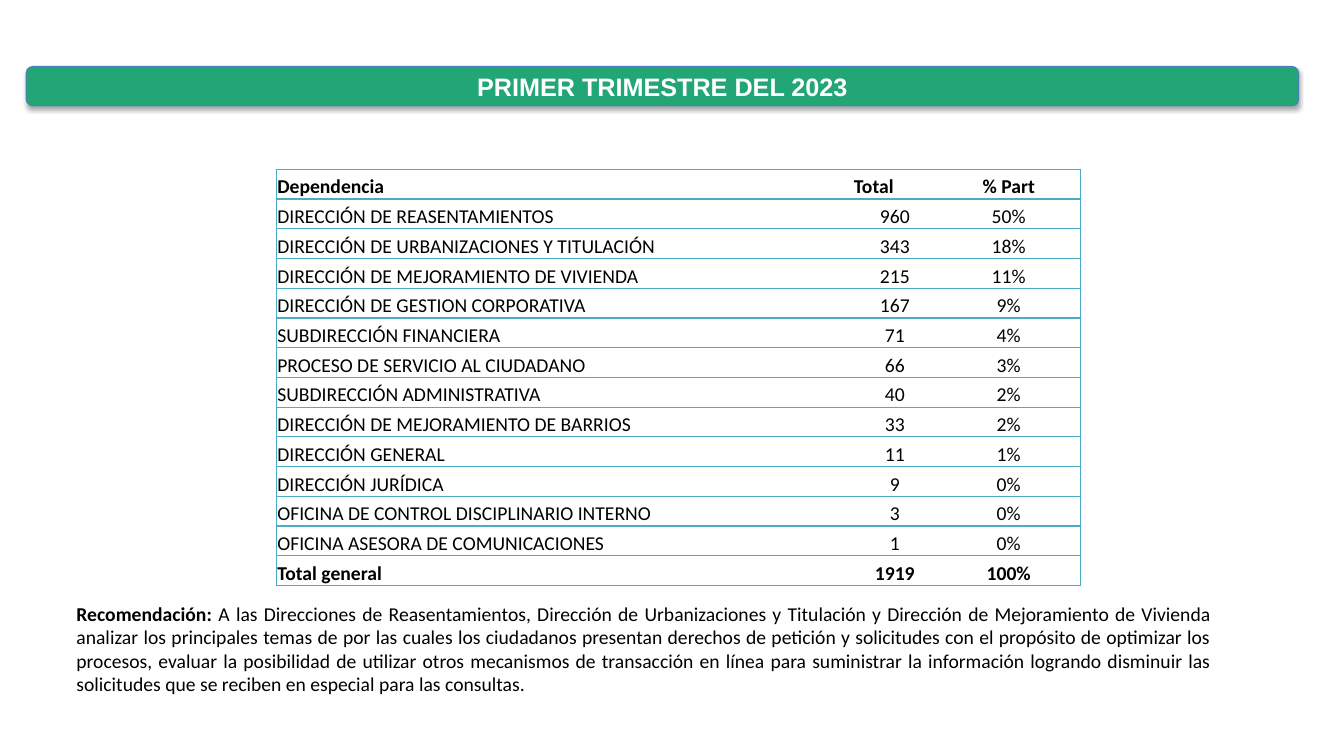
from lxml import etree
from pptx import Presentation
from pptx.dml.color import RGBColor
from pptx.enum.shapes import MSO_SHAPE
from pptx.enum.text import MSO_ANCHOR, MSO_AUTO_SIZE, PP_ALIGN
from pptx.oxml.ns import qn
from pptx.util import Pt

EMU_PER_PX = 9144  # 100 px to the inch

GREEN = RGBColor(0x22, 0xA6, 0x76)
BLUE = RGBColor(0x4B, 0x7E, 0xBC)
TEAL = RGBColor(0x4B, 0xAC, 0xC6)
BLACK = RGBColor(0, 0, 0)
WHITE = RGBColor(0xFF, 0xFF, 0xFF)

ROUNDED = MSO_SHAPE.ROUNDED_RECTANGLE
LEFT, CENTER, JUSTIFY = PP_ALIGN.LEFT, PP_ALIGN.CENTER, PP_ALIGN.JUSTIFY
MIDDLE, BOTTOM = MSO_ANCHOR.MIDDLE, MSO_ANCHOR.BOTTOM
GROW = MSO_AUTO_SIZE.SHAPE_TO_FIT_TEXT

TITLE = "PRIMER TRIMESTRE DEL 2023"
COLUMN_WIDTHS = (572, 83, 143)
REQUESTS = [
    ("Dependencia", "Total", "% Part"),
    ("DIRECCIÓN DE REASENTAMIENTOS", "960", "50%"),
    ("DIRECCIÓN DE URBANIZACIONES Y TITULACIÓN", "343", "18%"),
    ("DIRECCIÓN DE MEJORAMIENTO DE VIVIENDA", "215", "11%"),
    ("DIRECCIÓN DE GESTION CORPORATIVA", "167", "9%"),
    ("SUBDIRECCIÓN FINANCIERA", "71", "4%"),
    ("PROCESO DE SERVICIO AL CIUDADANO", "66", "3%"),
    ("SUBDIRECCIÓN ADMINISTRATIVA", "40", "2%"),
    ("DIRECCIÓN DE MEJORAMIENTO DE BARRIOS", "33", "2%"),
    ("DIRECCIÓN GENERAL", "11", "1%"),
    ("DIRECCIÓN JURÍDICA", "9", "0%"),
    ("OFICINA DE CONTROL DISCIPLINARIO INTERNO", "3", "0%"),
    ("OFICINA ASESORA DE COMUNICACIONES", "1", "0%"),
    ("Total general", "1919", "100%"),
]
RECOMMENDATION = (
    "A las Direcciones de Reasentamientos, Dirección de Urbanizaciones y Titulación "
    "y Dirección de Mejoramiento de Vivienda analizar los principales temas de por las "
    "cuales los ciudadanos presentan derechos de petición y solicitudes con el propósito "
    "de optimizar los procesos, evaluar la posibilidad de utilizar otros mecanismos de "
    "transacción en línea para suministrar la información logrando disminuir las "
    "solicitudes que se reciben en especial para las consultas."
)


def px(*lengths):
    return [length * EMU_PER_PX for length in lengths]


class ReportSlide:
    heading_font = "Arial"
    body_font = "Calibri"
    body_size = 14

    def __init__(self, presentation):
        self.slide = presentation.slides.add_slide(presentation.slide_layouts[6])

    def style_font(self, font, bold, color=BLACK, size=body_size, name=body_font):
        font.name = name
        font.size = Pt(size)
        font.bold = bold
        font.color.rgb = color

    def banner(self, title, *box):
        banner = self.slide.shapes.add_shape(ROUNDED, *px(*box))
        banner.fill.solid()
        banner.fill.fore_color.rgb = GREEN
        banner.line.color.rgb = BLUE
        banner.line.width = Pt(0.75)
        self.soft_shadow(banner)
        banner.text_frame.text = title
        banner.text_frame.vertical_anchor = MIDDLE
        heading = banner.text_frame.paragraphs[0]
        heading.alignment = CENTER
        self.style_font(heading.runs[0].font, True, WHITE, 18, self.heading_font)

    def soft_shadow(self, shape):
        shape.shadow.inherit = False
        effects = shape.fill._xPr.find(qn("a:effectLst"))
        shadow = etree.SubElement(effects, qn("a:outerShdw"), blurRad=str(Pt(3.1)),
                                  dist=str(Pt(1.8)), dir="5400000", rotWithShape="0")
        color = etree.SubElement(shadow, qn("a:srgbClr"), val=str(BLACK))
        etree.SubElement(color, qn("a:alpha"), val="35000")

    def table(self, rows, widths, left, top, height):
        box = px(left, top, sum(widths), height)
        table = self.slide.shapes.add_table(len(rows), len(widths), *box).table
        table.first_row = table.horz_banding = False
        for column, width in zip(table.columns, px(*widths)):
            column.width = width
        last_column = len(widths) - 1
        for r, row in enumerate(rows):
            bold = r in (0, len(rows) - 1)
            for c, content in enumerate(row):
                cell = table.cell(r, c)
                self.cell_borders(cell, c == 0, c == last_column)
                cell.fill.solid()
                cell.fill.fore_color.rgb = WHITE
                cell.margin_left, cell.margin_right, cell.margin_top = px(1, 1, 1)
                cell.margin_bottom = 0
                cell.vertical_anchor = BOTTOM
                cell.text_frame.text = content
                paragraph = cell.text_frame.paragraphs[0]
                paragraph.alignment = LEFT if c == 0 or (r, c) == (0, 1) else CENTER
                self.style_font(paragraph.runs[0].font, bold)

    def cell_borders(self, cell, left, right):
        """Rule a cell above and below, and on the table's outer sides only."""
        properties = cell._tc.get_or_add_tcPr()
        sides = {"a:lnL": left, "a:lnR": right, "a:lnT": True, "a:lnB": True}
        for side, ruled in sides.items():
            line = etree.SubElement(properties, qn(side), w=str(Pt(1)))
            if ruled:
                fill = etree.SubElement(line, qn("a:solidFill"))
                etree.SubElement(fill, qn("a:srgbClr"), val=str(TEAL))
            else:
                etree.SubElement(line, qn("a:noFill"))

    def note(self, label, body, *box):
        frame = self.slide.shapes.add_textbox(*px(*box)).text_frame
        frame.word_wrap = True
        frame.auto_size = GROW
        paragraph = frame.paragraphs[0]
        paragraph.alignment = JUSTIFY
        for content, bold in ((label, True), (body, False)):
            run = paragraph.add_run()
            run.text = content
            self.style_font(run.font, bold)


def main():
    presentation = Presentation()
    presentation.slide_width, presentation.slide_height = px(1333, 750)
    report = ReportSlide(presentation)
    report.banner(TITLE, 26, 66, 1262, 39)
    report.table(REQUESTS, COLUMN_WIDTHS, 274, 168, 413)
    report.note("Recomendación: ", RECOMMENDATION, 66, 592, 1146, 104)
    presentation.save("out.pptx")


if __name__ == "__main__":
    main()
